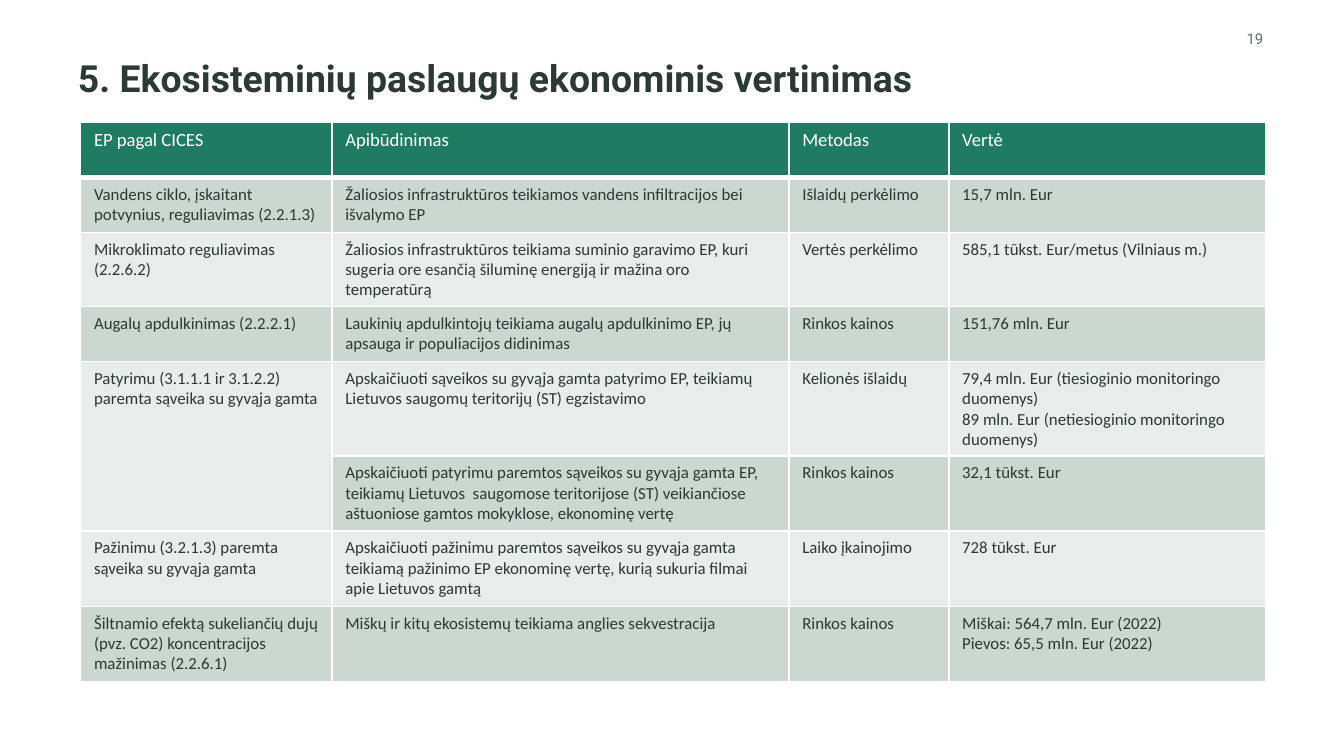
from lxml import etree
from pptx import Presentation
from pptx import util as u
from pptx.dml.color import RGBColor
from pptx.enum import text
from pptx.oxml import ns

WIDE = 10
HIGH = WIDE * 9 / 16
HUES = {
    "title": "2D3934", "page": "5A7268", "body": "2C3834", "head": "1F7B61",
    "dark": "CDD7D2", "light": "E8ECEA", "white": "FEFFFE",
}
COLS = [1.87, 3.4, 1.19, 2.36]
ROWS = [0.41, 0.41, 0.55, 0.41, 0.7, 0.56, 0.56, 0.56]
DATA = [
    ["EP pagal CICES", "Apibūdinimas", "Metodas", "Vertė"],
    ["Vandens ciklo, įskaitant potvynius, reguliavimas (2.2.1.3)",
     "Žaliosios infrastruktūros teikiamos vandens infiltracijos bei išvalymo EP",
     "Išlaidų perkėlimo", "15,7 mln. Eur"],
    ["Mikroklimato reguliavimas (2.2.6.2)",
     "Žaliosios infrastruktūros teikiama suminio garavimo EP, kuri sugeria ore "
     "esančią šiluminę energiją ir mažina oro temperatūrą",
     "Vertės perkėlimo", "585,1 tūkst. Eur/metus (Vilniaus m.)"],
    ["Augalų apdulkinimas (2.2.2.1)",
     "Laukinių apdulkintojų teikiama augalų apdulkinimo EP, jų apsauga ir "
     "populiacijos didinimas",
     "Rinkos kainos", "151,76 mln. Eur"],
    ["Patyrimu (3.1.1.1 ir 3.1.2.2) paremta sąveika su gyvąja gamta",
     "Apskaičiuoti sąveikos su gyvąja gamta patyrimo EP, teikiamų Lietuvos "
     "saugomų teritorijų (ST) egzistavimo",
     "Kelionės išlaidų",
     "79,4 mln. Eur (tiesioginio monitoringo duomenys)\n"
     "89 mln. Eur (netiesioginio monitoringo duomenys)"],
    [None,
     "Apskaičiuoti patyrimu paremtos sąveikos su gyvąja gamta EP, teikiamų "
     "Lietuvos  saugomose teritorijose (ST) veikiančiose aštuoniose gamtos "
     "mokyklose, ekonominę vertę",
     "Rinkos kainos", "32,1 tūkst. Eur"],
    ["Pažinimu (3.2.1.3) paremta sąveika su gyvąja gamta",
     "Apskaičiuoti pažinimu paremtos sąveikos su gyvąja gamta teikiamą pažinimo "
     "EP ekonominę vertę, kurią sukuria filmai apie Lietuvos gamtą",
     "Laiko įkainojimo", "728 tūkst. Eur"],
    ["Šiltnamio efektą sukeliančių dujų (pvz. CO2) koncentracijos mažinimas (2.2.6.1)",
     "Miškų ir kitų ekosistemų teikiama anglies sekvestracija",
     "Rinkos kainos",
     "Miškai: 564,7 mln. Eur (2022)\nPievos: 65,5 mln. Eur (2022)"],
]


def tint(name):
    return RGBColor.from_string(HUES[name])


def write(para, words, size, face, hue, bold=False):
    run = para.add_run()
    run.text = words
    font = run.font
    font.size, font.name, font.bold = u.Pt(size), face, bold
    font.color.rgb = tint(hue)


def label(slide, box, words, size, hue, bold=False,
          align=text.PP_ALIGN.LEFT, anchor=text.MSO_ANCHOR.TOP, space=1.0):
    frame = slide.shapes.add_textbox(*map(u.Inches, box)).text_frame
    frame.margin_left = frame.margin_right = 0
    frame.margin_top = frame.margin_bottom = 0
    frame.word_wrap = True
    frame.vertical_anchor = anchor
    para = frame.paragraphs[0]
    para.alignment, para.line_spacing = align, space
    write(para, words, size, "Roboto", hue, bold)


def edge(cell, sides):
    props = cell._tc.get_or_add_tcPr()
    for spot, (side, width) in enumerate(sides.items()):
        line = etree.Element(ns.qn("a:ln" + side), w=str(u.Pt(width)))
        fill = etree.SubElement(line, ns.qn("a:solidFill"))
        etree.SubElement(fill, ns.qn("a:srgbClr"), val=HUES["white"])
        props.insert(spot, line)


def fill_cell(cell, words, row):
    head = row == 0
    cell.fill.solid()
    cell.fill.fore_color.rgb = tint("head" if head else "dark" if row % 2 else "light")
    edge(cell, {"L": 1, "R": 1, "T": 3 if row == 1 else 1, "B": 3 if head else 1})
    if words is None:
        return
    frame = cell.text_frame
    for num, part in enumerate(words.split("\n")):
        para = frame.add_paragraph() if num else frame.paragraphs[0]
        write(para, part, 10 if head else 9, "Calibri", "white" if head else "body")


def values(slide, box):
    table = slide.shapes.add_table(len(ROWS), len(COLS), *map(u.Inches, box)).table
    for col, share in zip(table.columns, COLS):
        col.width = u.Inches(box[2] * share / sum(COLS))
    for row, share in zip(table.rows, ROWS):
        row.height = u.Inches(box[3] * share / sum(ROWS))
    for row, line in enumerate(DATA):
        for col, words in enumerate(line):
            fill_cell(table.cell(row, col), words, row)
        if line[0] is None:
            table.cell(row - 1, 0).merge(table.cell(row, 0))


def main():
    deck = Presentation()
    deck.slide_width, deck.slide_height = u.Inches(WIDE), u.Inches(HIGH)
    slide = deck.slides.add_slide(deck.slide_layouts[6])
    label(slide, (0.58, 0.45, 8.82, 0.3),
          "5. Ekosisteminių paslaugų ekonominis vertinimas", 20, "title",
          bold=True, space=0.9)
    label(slide, (7.15, 0.22, 2.25, 0.13), "19", 8, "page",
          align=text.PP_ALIGN.RIGHT, anchor=text.MSO_ANCHOR.MIDDLE)
    values(slide, (0.6, 0.91, sum(COLS), sum(ROWS)))
    deck.save("out.pptx")


if __name__ == "__main__":
    main()
